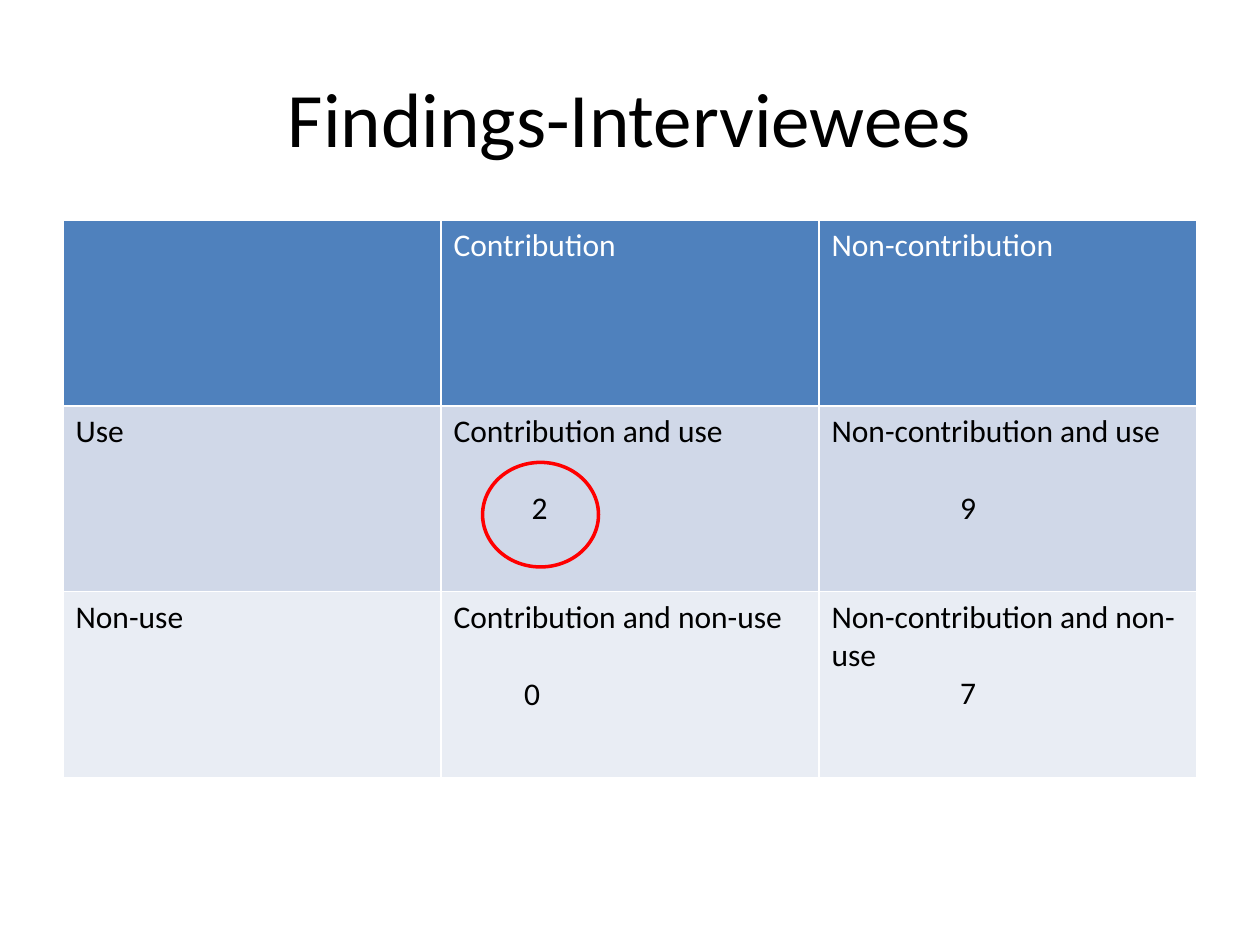
from pptx import Presentation
from pptx.dml.color import RGBColor
from pptx.enum import shapes, text
from pptx.util import Inches, Pt

COLORS = {
    "text": "000000",
    "header_text": "FFFFFF",
    "header": "4F81BD",
    "use": "D0D8E8",
    "non_use": "E9EDF4",
    "ring": "FF0000",
}
ROWS = [
    ("header", [("", None), ("Contribution", None), ("Non-contribution", None)]),
    ("use", [("Use", None),
             ("Contribution and use", ("2", 0.62, 22)),
             ("Non-contribution and use", ("9", 1.02, 22))]),
    ("non_use", [("Non-use", None),
                 ("Contribution and non-use", ("0", 0.56, 22)),
                 ("Non-contribution and non-use", ("7", 1.02, 0))]),
]


def color(name):
    return RGBColor.from_string(COLORS[name])


def add_run(p, words, size, color_name):
    r = p.add_run()
    r.text = words
    for key, value in {"name": "Calibri", "size": Pt(size), "bold": False}.items():
        setattr(r.font, key, value)
    r.font.color.rgb = color(color_name)


def add_title(s, box, words):
    tf = s.shapes.add_textbox(*map(Inches, box)).text_frame
    for key, value in {"word_wrap": True,
                       "vertical_anchor": text.MSO_ANCHOR.MIDDLE}.items():
        setattr(tf, key, value)
    p = tf.paragraphs[0]
    p.alignment = text.PP_ALIGN.CENTER
    add_run(p, words, 44, "text")


def add_count(tf, count, indent, gap):
    p = tf.add_paragraph()
    p.space_before = Pt(gap)
    p._p.get_or_add_pPr().set("marL", str(Inches(indent)))
    add_run(p, count, 18, "text")


def add_findings(s, box):
    table = s.shapes.add_table(len(ROWS), 3, *map(Inches, box)).table
    for i, (band, cells) in enumerate(ROWS):
        ink = "header_text" if band == "header" else "text"
        for j, (label, count) in enumerate(cells):
            cell = table.cell(i, j)
            cell.fill.solid()
            cell.fill.fore_color.rgb = color(band)
            if label:
                add_run(cell.text_frame.paragraphs[0], label, 18, ink)
            if count:
                add_count(cell.text_frame, *count)


def add_ring(s, box):
    sp = s.shapes.add_shape(shapes.MSO_SHAPE.OVAL, *map(Inches, box))
    sp.shadow.inherit = False
    sp.fill.background()
    sp.line.color.rgb = color("ring")
    sp.line.width = Pt(2)


def main():
    prs = Presentation()
    prs.slide_width, prs.slide_height = Inches(10), Inches(7.5)
    s = prs.slides.add_slide(prs.slide_layouts[6])
    add_title(s, (0.5, 0.3, 9, 1.25), "Findings-Interviewees")
    add_findings(s, (0.5, 1.75, 9, 4.42))
    add_ring(s, (3.83, 3.67, 0.92, 0.83))
    prs.save("out.pptx")


if __name__ == "__main__":
    main()
